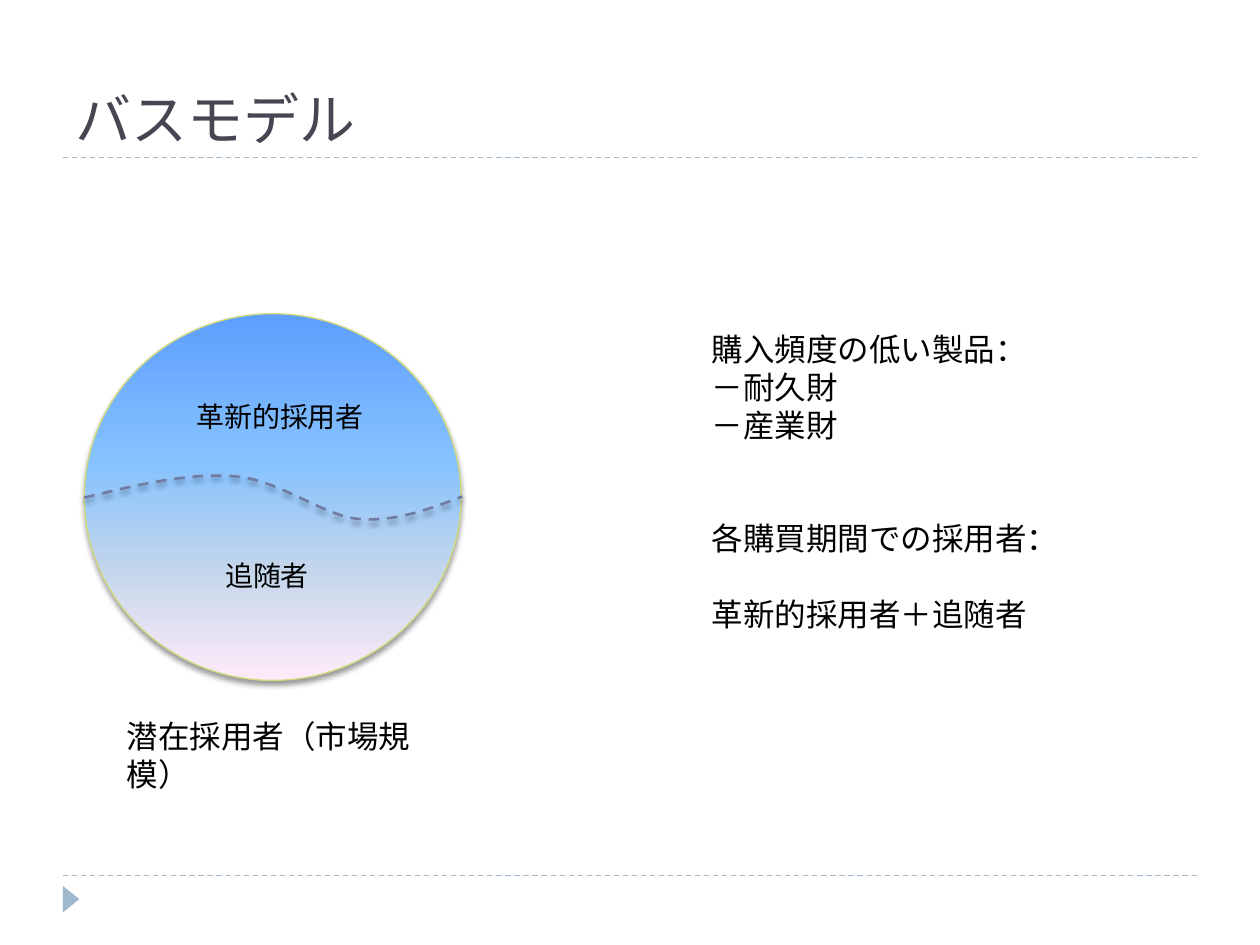
import pptx
import pptx.util
import pptx.dml.color
import pptx.enum.dml
import pptx.enum.shapes
import pptx.enum.text
import pptx.oxml
import pptx.oxml.ns

Pt = pptx.util.Pt
RGB = pptx.dml.color.RGBColor
SHAPE = pptx.enum.shapes.MSO_SHAPE
DASH = pptx.enum.dml.MSO_LINE.DASH
ANCHOR = pptx.enum.text.MSO_ANCHOR

INK = RGB(0x00, 0x00, 0x00)
SLATE = RGB(0x46, 0x46, 0x53)
MIST = RGB(0x9F, 0xB8, 0xCD)
LIME = RGB(0xD2, 0xDA, 0x7A)
INDIGO = RGB(0x72, 0x7C, 0xA3)
STOPS = [
    (0, RGB(0x5E, 0x9E, 0xFF)),
    (40, RGB(0x85, 0xC2, 0xFF)),
    (70, RGB(0xC4, 0xD6, 0xEB)),
    (100, RGB(0xFF, 0xEB, 0xFA)),
]


def make_xml(text):
    """Parse DrawingML text whose root is in the a: namespace."""
    head, tail = text.split(">", 1)
    end = "/>" if head.endswith("/") else ">"
    head = head.rstrip("/")
    return pptx.oxml.parse_xml(f"{head} {pptx.oxml.ns.nsdecls('a')}{end}{tail}")


def add_text(slide, box, lines, size=18, font="Calibri", color=INK,
             anchor=ANCHOR.TOP, wrap=True, gaps=None):
    """Write one paragraph per line; gaps maps a line number to space before."""
    frame = slide.shapes.add_textbox(*map(Pt, box)).text_frame
    frame.word_wrap = wrap
    frame.vertical_anchor = anchor
    frame.text = "\n".join(lines)
    for num, para in enumerate(frame.paragraphs):
        para.font.size = Pt(size)
        para.font.name = font
        para.font.color.rgb = color
        if gaps and num in gaps:
            para.space_before = Pt(gaps[num])


def set_line(line, color, width, dash=None):
    line.color.rgb = color
    line.width = Pt(width)
    if dash:
        line.dash_style = dash


def add_shade(shape):
    """Give the shape a soft shadow straight below it."""
    shape.shadow.inherit = False
    shape._element.spPr.find(pptx.oxml.ns.qn("a:effectLst")).append(make_xml(
        f'<a:outerShdw blurRad="{Pt(3)}" dist="{Pt(2)}" dir="5400000" rotWithShape="0">'
        '<a:srgbClr val="000000"><a:alpha val="40000"/></a:srgbClr></a:outerShdw>'))


def add_rule(slide, left, top, width):
    rule = slide.shapes.add_connector(
        pptx.enum.shapes.MSO_CONNECTOR.STRAIGHT,
        Pt(left), Pt(top), Pt(left + width), Pt(top))
    set_line(rule.line, MIST, 0.75, DASH.DASH)
    rule._element.spPr.append(make_xml("<a:effectLst/>"))


def add_head(slide, box):
    left, top, width, height = box
    add_rule(slide, left, top + height, width)
    add_text(slide, box, ["バスモデル"], size=32, font="Roboto Slab",
             color=SLATE, anchor=ANCHOR.BOTTOM)


def add_foot(slide, left, top, width):
    add_rule(slide, left, top, width)
    mark = slide.shapes.add_shape(SHAPE.ISOSCELES_TRIANGLE, Pt(left - 2.9),
                                  Pt(top + 8.7), Pt(15.1), Pt(9.4))
    mark.rotation = 90
    mark.shadow.inherit = False
    mark.fill.solid()
    mark.fill.fore_color.rgb = MIST
    mark.line.fill.background()


def add_wave(slide, left, top):
    """Draw three joined Bezier curves from left to right."""
    start, *rest = [(Pt(left + x), Pt(top + y)) for x, y in [
        (0, 14.4), (29.5, 7.2), (59.8, 0), (85.7, 2.2), (112.3, 4.3),
        (135.4, 24.5), (157, 26.6), (178.6, 28.1), (197.3, 20.9), (216, 13.7)]]
    build = slide.shapes.build_freeform(*start)
    build.add_line_segments(rest, close=False)
    wave = build.convert_to_shape()
    steps = wave._element.xpath(".//a:lnTo")
    for i in range(0, len(steps), 3):
        curve = make_xml("<a:cubicBezTo/>")
        steps[i].addprevious(curve)
        for step in steps[i:i + 3]:
            curve.append(step[0])
            step.getparent().remove(step)
    wave.fill.background()
    set_line(wave.line, INDIGO, 1.5, DASH.DASH)
    add_shade(wave)


def add_market(slide, box):
    """Draw the circle of adopters, its two parts and its caption."""
    left, top, width, height = box
    disc = slide.shapes.add_shape(SHAPE.OVAL, *map(Pt, box))
    disc.fill.gradient()
    disc.fill.gradient_angle = 270
    stops = disc._element.xpath(".//a:gsLst")[0]
    for old in list(stops):
        stops.remove(old)
    for pos, color in STOPS:
        stops.append(make_xml(
            f'<a:gs pos="{pos * 1000}"><a:srgbClr val="{color}"/></a:gs>'))
    set_line(disc.line, LIME, 0.75)
    add_shade(disc)
    add_wave(slide, left, top + 90.7)
    for text, dx, dy, wide in [("革新的採用者", 56.9, 45.4, 111.6),
                               ("追随者", 73.4, 136.1, 63.4)]:
        add_text(slide, (left + dx, top + dy, wide, 26.6), [text],
                 size=16, wrap=False)
    add_text(slide, (left + 17.3, top + height + 17.3, 196.6, 28.8),
             ["潜在採用者（市場規模）"])


def add_notes(slide, box):
    add_text(slide, box, [
        "購入頻度の低い製品：", "－耐久財", "－産業財",
        "各購買期間での採用者：", "革新的採用者＋追随者"], gaps={3: 43.2, 4: 21.6})


def main():
    deck = pptx.Presentation()
    deck.slide_width, deck.slide_height = Pt(720), Pt(540)
    slide = deck.slides.add_slide(deck.slide_layouts[6])
    add_foot(slide, 36, 500.4, 648)
    add_head(slide, (36, 12.2, 648, 77.8))
    add_market(slide, (48.2, 179.3, 215.3, 209.5))
    add_notes(slide, (399.6, 185, 203.8, 181.4))
    deck.save("out.pptx")


if __name__ == "__main__":
    main()
